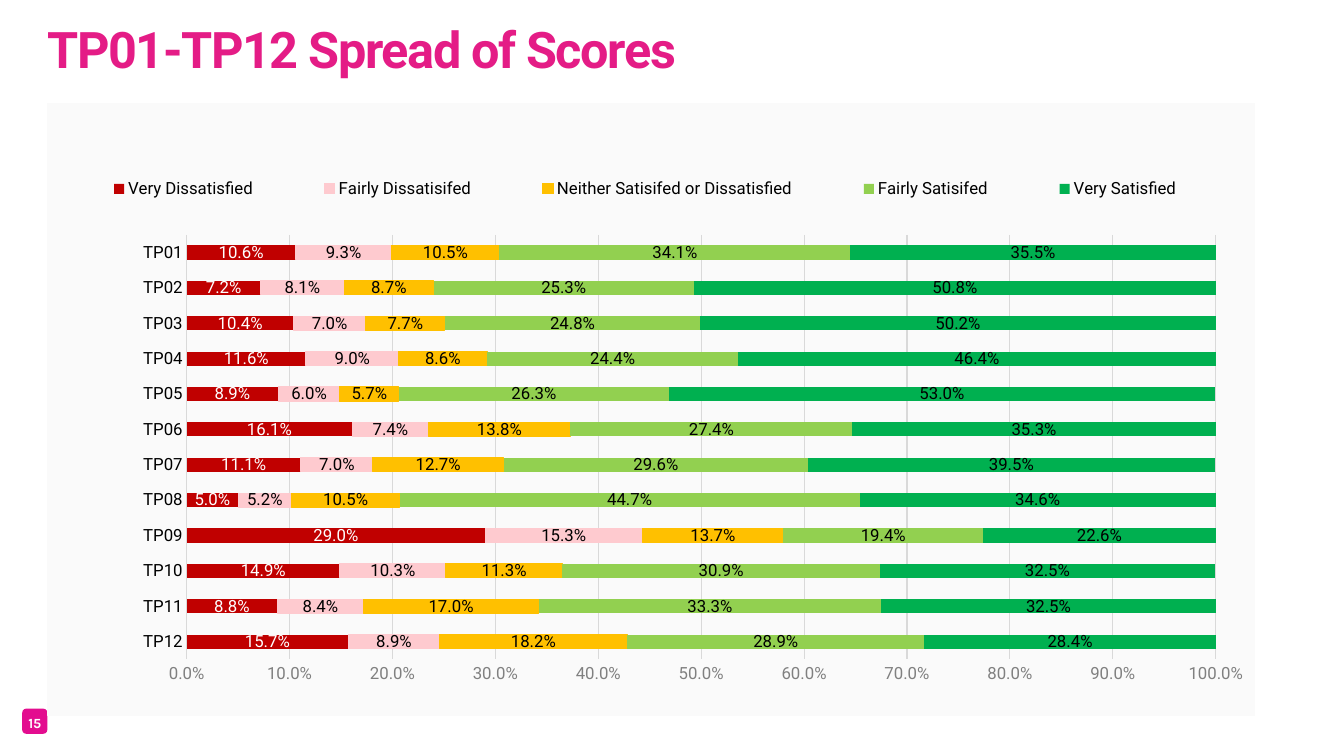
from lxml import etree
from pptx import Presentation
from pptx.chart.data import CategoryChartData
from pptx.dml.color import RGBColor
from pptx.enum.chart import XL_CHART_TYPE, XL_LABEL_POSITION, XL_LEGEND_POSITION, XL_TICK_MARK
from pptx.enum.shapes import MSO_SHAPE
from pptx.enum.text import MSO_ANCHOR, MSO_AUTO_SIZE, PP_ALIGN
from pptx.oxml import parse_xml
from pptx.oxml.ns import nsdecls, qn
from pptx.util import Pt

STACKED_BARS = XL_CHART_TYPE.BAR_STACKED
LABEL_CENTER = XL_LABEL_POSITION.CENTER
LEGEND_TOP = XL_LEGEND_POSITION.TOP
NO_TICKS = XL_TICK_MARK.NONE
ROUNDED = MSO_SHAPE.ROUNDED_RECTANGLE
TOP, BOTTOM = MSO_ANCHOR.TOP, MSO_ANCHOR.BOTTOM
GROW = MSO_AUTO_SIZE.SHAPE_TO_FIT_TEXT
LEFT, CENTER = PP_ALIGN.LEFT, PP_ALIGN.CENTER

COLORS = {
    "title": "E41C86", "badge": "E30D8F", "white": "FFFFFF", "black": "000000",
    "axis": "808080", "grid": "D9D9D9", "panel": "FAFAFA",
    "red": "C00000", "pink": "FECACF", "amber": "FFC000",
    "light green": "92D050", "green": "00B050",
}
PERCENT = "0.0%"
BORDERED = ("pink", "amber")
QUESTIONS = [f"TP{number:02d}" for number in range(12, 0, -1)]
SCORES = [
    ("Very Dissatisfied", "red",
     [15.7, 8.8, 14.9, 29.0, 5.0, 11.1, 16.1, 8.9, 11.6, 10.4, 7.2, 10.6]),
    ("Fairly Dissatisifed", "pink",
     [8.9, 8.4, 10.3, 15.3, 5.2, 7.0, 7.4, 6.0, 9.0, 7.0, 8.1, 9.3]),
    ("Neither Satisifed or Dissatisfied", "amber",
     [18.2, 17.0, 11.3, 13.7, 10.5, 12.7, 13.8, 5.7, 8.6, 7.7, 8.7, 10.5]),
    ("Fairly Satisifed", "light green",
     [28.9, 33.3, 30.9, 19.4, 44.7, 29.6, 27.4, 26.3, 24.4, 24.8, 25.3, 34.1]),
    ("Very Satisfied", "green",
     [28.4, 32.5, 32.5, 22.6, 34.6, 39.5, 35.3, 53.0, 46.4, 50.2, 50.8, 35.5]),
]


def rgb(name):
    return RGBColor.from_string(COLORS[name])


def set_values(target, values):
    for name, value in values.items():
        setattr(target, name, value)


def set_font(font, color, size=12, name="Roboto", bold=False):
    set_values(font, {"name": name, "size": Pt(size), "bold": bold})
    font.color.rgb = rgb(color)


def add_text(shapes, box, text, font_values, line_spacing, anchor=TOP, alignment=LEFT):
    text_box = shapes.add_textbox(*map(Pt, box))
    frame = text_box.text_frame
    set_values(frame, {
        "margin_left": 0, "margin_right": 0, "margin_top": 0, "margin_bottom": 0,
        "word_wrap": True, "auto_size": GROW, "vertical_anchor": anchor,
    })
    paragraph = frame.paragraphs[0]
    set_values(paragraph, {"alignment": alignment, "line_spacing": Pt(line_spacing)})
    run = paragraph.add_run()
    run.text = text
    set_font(run.font, **font_values)
    return run


def add_title(slide, text):
    run = add_text(slide.shapes, (33.84, 0, 805.68, 56.16), text,
                   {"color": "title", "size": 36, "bold": True}, 60, BOTTOM)
    run.font._element.set("spc", "-100")


def add_page_badge(slide, number):
    shapes = slide.shapes.add_group_shape().shapes
    badge = shapes.add_shape(ROUNDED, *map(Pt, (15.84, 506.16, 18, 18)))
    badge.shadow.inherit = False
    badge.fill.solid()
    badge.fill.fore_color.rgb = rgb("badge")
    badge.line.fill.background()
    add_text(shapes, (15.84, 510.48, 18, 9.36), number,
             {"color": "white", "size": 10, "name": "Karla", "bold": True},
             12, alignment=CENTER)


def make_layout(x, y, width, height, inner=False):
    """Return a manual chart layout, in fractions of the chart."""
    layout = parse_xml(f"<c:layout {nsdecls('c')}><c:manualLayout/></c:layout>")
    entries = [("layoutTarget", "inner")] if inner else []
    entries += [("xMode", "edge"), ("yMode", "edge"),
                ("x", x), ("y", y), ("w", width), ("h", height)]
    for tag, value in entries:
        etree.SubElement(layout[0], qn(f"c:{tag}")).set("val", str(value))
    return layout


def drop_layout(element):
    for layout in element.findall(qn("c:layout")):
        element.remove(layout)


def style_chart_area(chart):
    fill = f'<a:solidFill><a:srgbClr val="{COLORS["panel"]}"/></a:solidFill>'
    chart_element = chart._chartSpace.find(qn("c:chart"))
    chart_element.addnext(parse_xml(
        f'<c:spPr {nsdecls("c", "a")}>{fill}<a:ln w="{Pt(0.75)}">{fill}</a:ln></c:spPr>'))
    plot_area = chart_element.find(qn("c:plotArea"))
    drop_layout(plot_area)
    plot_area.insert(0, make_layout(0.115, 0.215, 0.853, 0.694, inner=True))


def style_legend(chart):
    chart.has_legend = True
    legend = chart.legend
    set_values(legend, {"position": LEGEND_TOP, "include_in_layout": False})
    set_font(legend.font, "black")
    drop_layout(legend._element)
    legend._element.find(qn("c:legendPos")).addnext(make_layout(0, 0.09, 0.99, 0.1))


def style_axis(axis, color):
    set_values(axis, {"major_tick_mark": NO_TICKS, "minor_tick_mark": NO_TICKS})
    axis.format.line.fill.background()
    set_font(axis.tick_labels.font, color)


def style_value_axis(axis):
    style_axis(axis, "axis")
    set_values(axis, {"minimum_scale": 0, "maximum_scale": 1, "major_unit": 0.1,
                      "has_major_gridlines": True})
    set_values(axis.tick_labels, {"number_format": PERCENT, "number_format_is_linked": False})
    grid_line = axis.major_gridlines.format.line
    grid_line.color.rgb = rgb("grid")
    grid_line.width = Pt(0.75)


def style_series(series, color):
    series.format.fill.solid()
    series.format.fill.fore_color.rgb = rgb(color)
    if color in BORDERED:
        series.format.line.color.rgb = rgb(color)
        series.format.line.width = Pt(0.75)
    labels = series.data_labels
    set_values(labels, {"show_value": True, "position": LABEL_CENTER,
                        "number_format": PERCENT, "number_format_is_linked": False})
    set_font(labels.font, "white" if color == "red" else "black")


def add_score_chart(slide):
    data = CategoryChartData(number_format=PERCENT)
    data.categories = QUESTIONS
    for name, _, percentages in SCORES:
        data.add_series(name, [round(value / 100, 3) for value in percentages])
    box = map(Pt, (33.84, 73.44, 862.56, 437.76))
    chart = slide.shapes.add_chart(STACKED_BARS, *box, data).chart
    chart.has_title = False
    set_font(chart.font, "black")
    style_chart_area(chart)
    style_legend(chart)
    style_axis(chart.category_axis, "black")
    style_value_axis(chart.value_axis)
    plot = chart.plots[0]
    set_values(plot, {"gap_width": 150, "overlap": 100, "vary_by_categories": False})
    for series, (_, color, _) in zip(plot.series, SCORES):
        style_series(series, color)


def main():
    presentation = Presentation()
    set_values(presentation, {"slide_width": Pt(960), "slide_height": Pt(540)})
    slide = presentation.slides.add_slide(presentation.slide_layouts[6])
    add_page_badge(slide, "15")
    add_title(slide, "TP01-TP12 Spread of Scores")
    add_score_chart(slide)
    presentation.save("out.pptx")


if __name__ == "__main__":
    main()
